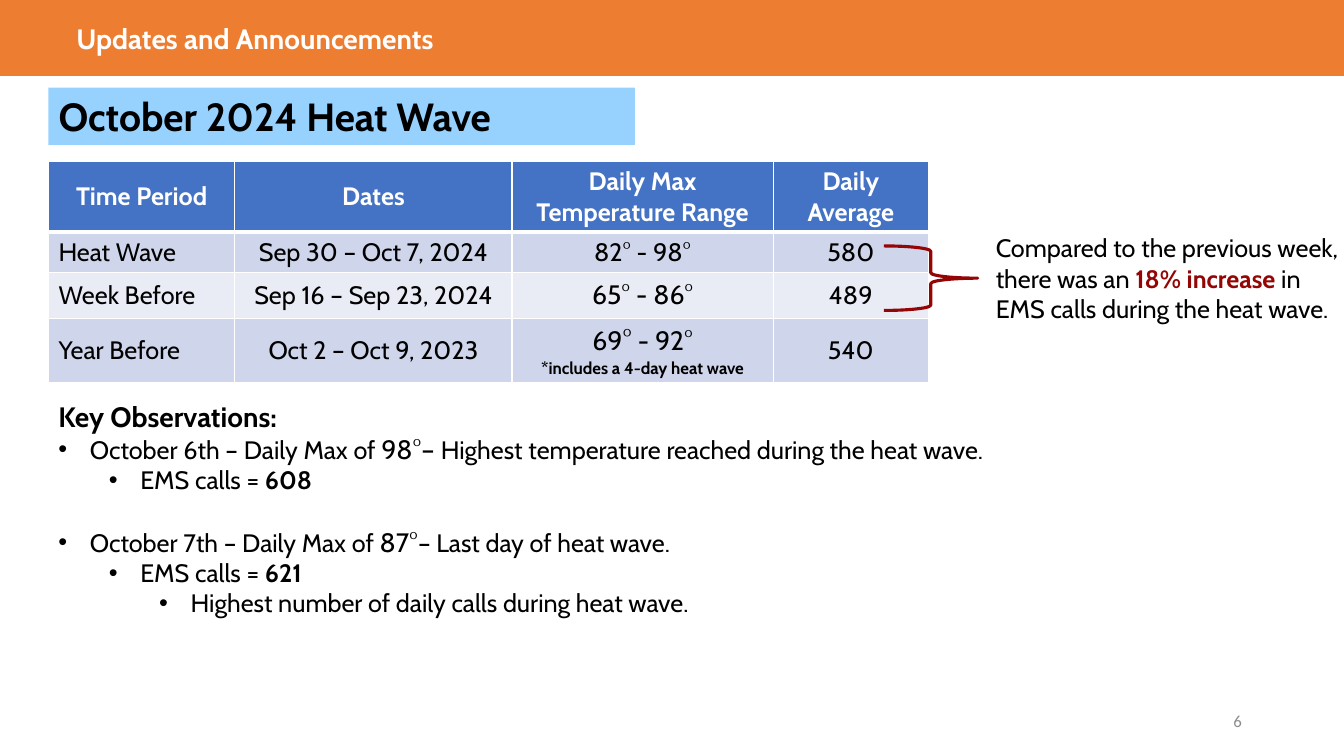
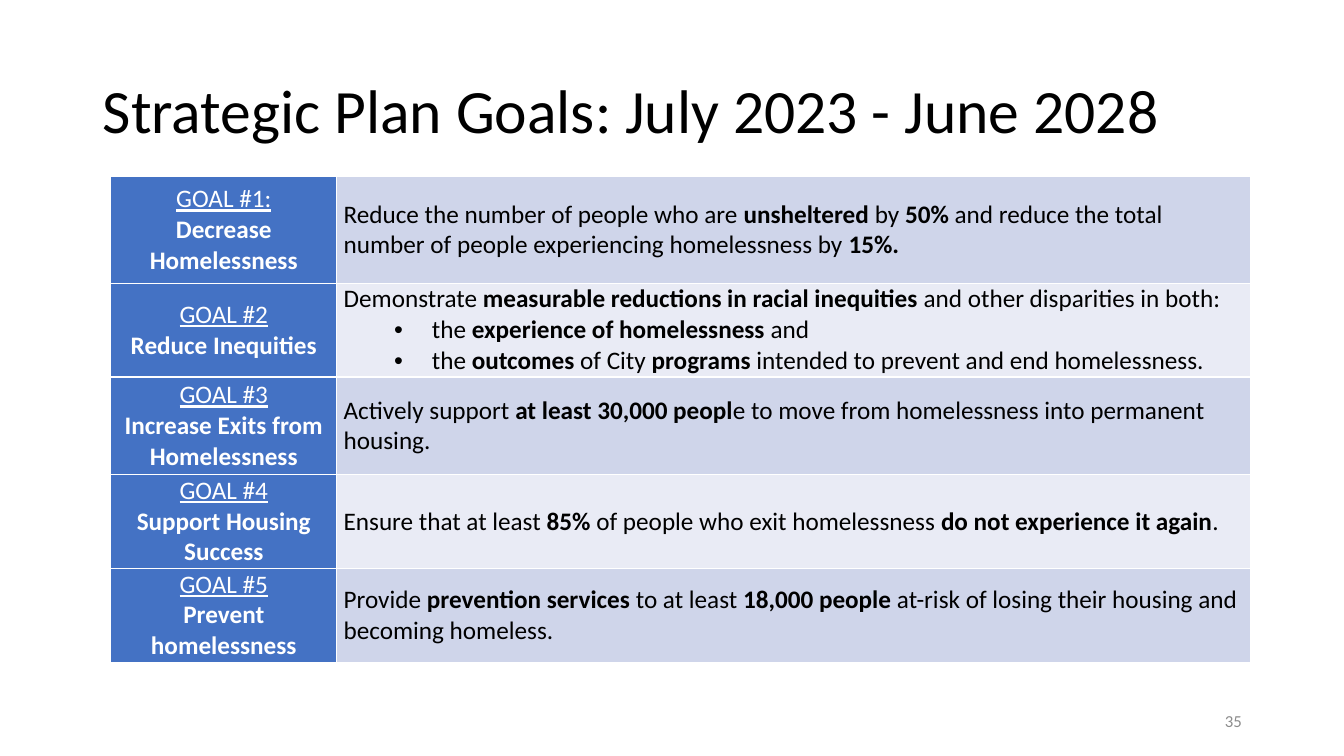
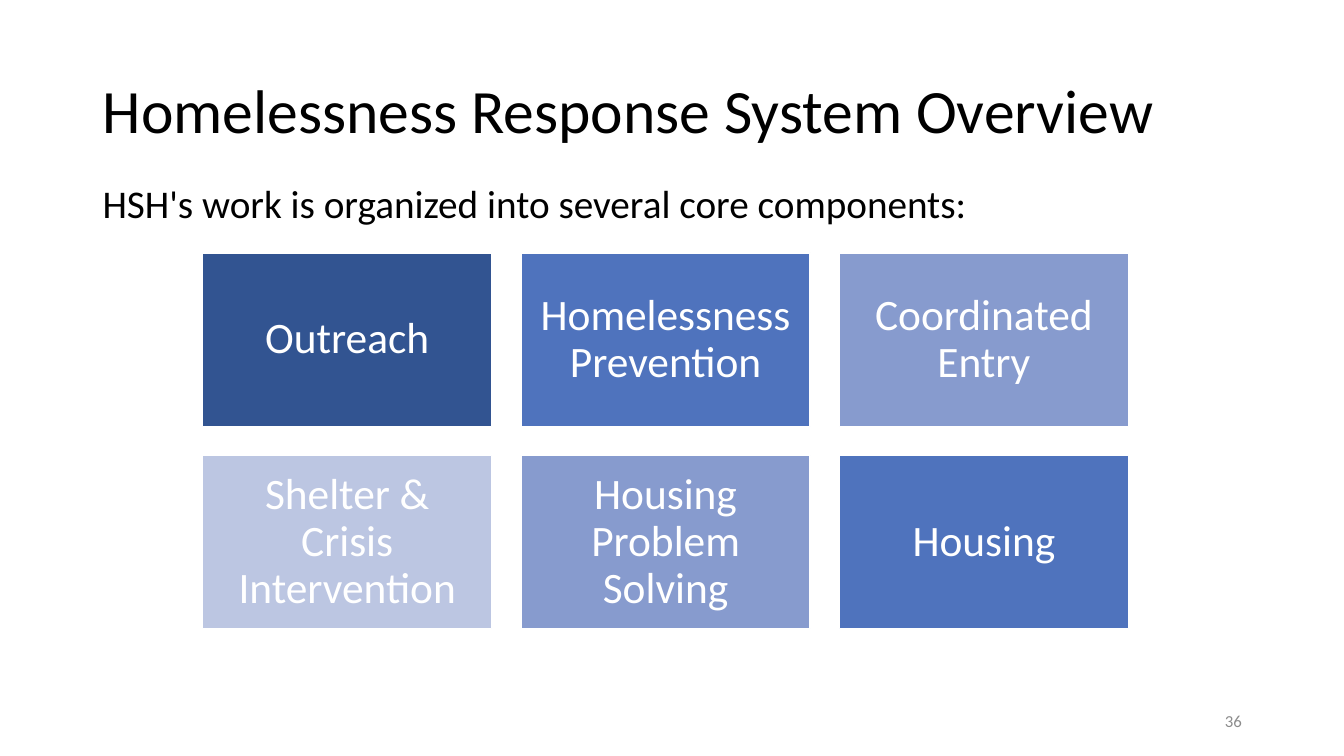
from lxml import etree
from pptx import Presentation
from pptx.dml.color import RGBColor
from pptx.enum import shapes, text
from pptx.oxml import ns
from pptx.util import Pt

COLORS = {
    "white": "FFFFFF", "black": "000000", "gray": "8C8C8C", "orange": "ED7D31",
    "sky": "97D2FF", "red": "940606", "blue": "4472C4",
    "row dark": "CFD5EA", "row light": "E9EBF5",
    "tile navy": "325491", "tile blue": "4F73BD",
    "tile mid": "879BCE", "tile pale": "BCC6E2",
}
LEFT, CENTER, RIGHT = text.PP_ALIGN.LEFT, text.PP_ALIGN.CENTER, text.PP_ALIGN.RIGHT
TOP, MIDDLE = text.MSO_ANCHOR.TOP, text.MSO_ANCHOR.MIDDLE
RECTANGLE = shapes.MSO_SHAPE.RECTANGLE
BULLET_STEP = 22.5


def rgb(name):
    return RGBColor.from_string(COLORS[name])


def add_xml(parent, tag, **attributes):
    return etree.SubElement(parent, ns.qn(tag), attributes)


def set_margins(target, margins):
    """Set left, top, right and bottom margins of a text frame or a cell."""
    for side, margin in zip(("left", "top", "right", "bottom"), margins):
        setattr(target, f"margin_{side}", Pt(margin))


def spans(pieces):
    """Yield (text, format) pairs; ** switches bold on and off in a string."""
    for piece in [pieces] if isinstance(pieces, str) else pieces:
        if isinstance(piece, tuple):
            yield piece
            continue
        for index, part in enumerate(piece.split("**")):
            if part:
                yield part, {"bold": True} if index % 2 else {}


def paragraph(pieces, **layout):
    return {"pieces": pieces, **layout}


def bullet(pieces, indent, hanging=BULLET_STEP, **layout):
    return paragraph(pieces, indent=indent, hanging=hanging, **layout)


class Deck:
    def __init__(self):
        self.deck = Presentation()
        self.deck.slide_width, self.deck.slide_height = Pt(960), Pt(540)
        self.page = None
        self.font = "Calibri"

    def add_page(self, number, font):
        self.page = self.deck.slides.add_slide(self.deck.slide_layouts[5])
        self.font = font
        self.text((678.2, 500.4, 216, 28.8), [str(number)], align=RIGHT, anchor=MIDDLE,
                  name="Calibri", size=12, color="gray")

    def set_text(self, frame, paragraphs, align=LEFT, anchor=TOP, line_spacing=None,
                 margins=(), **style):
        frame.word_wrap = True
        frame.vertical_anchor = anchor
        set_margins(frame, margins)
        for index, item in enumerate(paragraphs):
            if not isinstance(item, dict):
                item = paragraph(item)
            para = frame.add_paragraph() if index else frame.paragraphs[0]
            para.alignment = align
            if line_spacing:
                para.line_spacing = line_spacing
            if "space_before" in item:
                para.space_before = Pt(item["space_before"])
            if "indent" in item:
                self.add_bullet(para, item["indent"], item["hanging"])
            for words, changes in spans(item["pieces"]):
                span = para.add_run()
                span.text = words
                self.set_font(span.font, {**style, **item.get("style", {}), **changes})

    def set_font(self, font, changes):
        values = {"name": self.font, "size": 18, "bold": False, "color": "black", **changes}
        font.color.rgb = rgb(values.pop("color"))
        values["size"] = Pt(values["size"])
        for key, value in values.items():
            setattr(font, key, value)

    def add_bullet(self, para, indent, hanging):
        properties = para._p.get_or_add_pPr()
        properties.set("marL", str(Pt(indent)))
        properties.set("indent", str(-Pt(hanging)))
        add_xml(properties, "a:buFont", typeface="Arial")
        add_xml(properties, "a:buChar", char="•")

    def title(self, place, words, fill=None, **style):
        box = self.page.shapes.title
        box.left, box.top, box.width, box.height = map(Pt, place)
        box.text_frame.auto_size = text.MSO_AUTO_SIZE.NONE
        if fill:
            box.fill.solid()
            box.fill.fore_color.rgb = rgb(fill)
        self.set_text(box.text_frame, [words], **style)

    def plain_title(self, words):
        self.title((66.2, 28.8, 828, 104.4), words, size=44, anchor=MIDDLE, line_spacing=0.9)

    def text(self, place, paragraphs, **style):
        box = self.page.shapes.add_textbox(*map(Pt, place))
        self.set_text(box.text_frame, paragraphs, **style)

    def shape(self, kind, place, fill=None, line=None, weight=1, paragraphs=(), **style):
        box = self.page.shapes.add_shape(kind, *map(Pt, place))
        box.shadow.inherit = False
        if fill:
            box.fill.solid()
            box.fill.fore_color.rgb = rgb(fill)
        else:
            box.fill.background()
        box.line.color.rgb = rgb(line)
        box.line.width = Pt(weight)
        if paragraphs:
            self.set_text(box.text_frame, paragraphs, **style)

    def table(self, left, top, widths, heights, header_row):
        place = (left, top, sum(widths), sum(heights))
        frame = self.page.shapes.add_table(len(heights), len(widths), *map(Pt, place))
        table = frame.table
        table.first_row, table.horz_banding = header_row, False
        for column, width in zip(table.columns, widths):
            column.width = Pt(width)
        for row, height in zip(table.rows, heights):
            row.height = Pt(height)
        return table

    def cell(self, cell, paragraphs, fill, bottom=1, margins=(7.2, 3.6, 7.2, 3.6), **style):
        properties = cell._tc.get_or_add_tcPr()
        for side, weight in (("L", 1), ("R", 1), ("T", 1), ("B", bottom)):
            border = add_xml(properties, f"a:ln{side}", w=str(Pt(weight)))
            add_xml(add_xml(border, "a:solidFill"), "a:srgbClr", val=COLORS["white"])
        cell.fill.solid()
        cell.fill.fore_color.rgb = rgb(fill)
        self.set_text(cell.text_frame, paragraphs, **style)
        cell.vertical_anchor = MIDDLE
        set_margins(cell, margins)


def heat_wave(deck):
    deck.add_page(6, "Cabin")
    deck.shape(RECTANGLE, (0, 0, 960, 53.5), fill="orange", line="orange")
    deck.text((47.5, 5.8, 715, 46), ["Updates and Announcements"], anchor=MIDDLE,
              line_spacing=0.9, size=20, bold=True, color="white")
    deck.title((34.6, 62.6, 419, 41), "October 2024 Heat Wave", fill="sky", size=28, bold=True)

    larger = {"size": 19}
    rows = [
        [["Time Period"], ["Dates"], ["Daily Max", "Temperature Range"], ["Daily Average"]],
        [["Heat Wave"], ["Sep 30 – Oct 7, 2024"], ["82° - 98°"], ["580"]],
        [["Week Before"], ["Sep 16 – Sep 23, 2024"], [[("65° - 86°", larger)]], ["489"]],
        [["Year Before"], ["Oct 2 – Oct 9, 2023"],
         [[("69", larger), ("°", {"size": 20}), (" - 92°", larger)],
          [("*includes a 4-day heat wave", {"size": 12, "bold": True})]], ["540"]],
    ]
    table = deck.table(34.6, 115.2, (133.2, 198, 186.5, 110.9), (47.5, 27.4, 33.1, 43.2), True)
    for r, row in enumerate(rows):
        for c, paragraphs in enumerate(row):
            if r == 0:
                style = {"fill": "blue", "bottom": 3, "color": "white", "bold": True}
            else:
                style = {"fill": "row dark" if r % 2 else "row light"}
            deck.cell(table.cell(r, c), paragraphs,
                      align=LEFT if r and c == 0 else CENTER, **style)

    deck.shape(shapes.MSO_SHAPE.RIGHT_BRACE, (631.4, 175.7, 67, 46.1), line="red", weight=2.25)
    deck.text((704.2, 162.7, 255.8, 94.3), [[
        "Compared to the previous week, there was an ",
        ("18% increase ", {"color": "red", "bold": True}),
        "in EMS calls during the heat wave."]], margins=(7.2, 3.6, 0, 3.6))
    first, second, third = (BULLET_STEP + 36 * level for level in range(3))
    deck.text((34.6, 281.5, 870.5, 163.4), [
        paragraph("**Key Observations:**", style={"size": 20}),
        bullet(["October 6th – Daily Max of ", ("98°– ", larger),
                "Highest temperature reached during the heat wave."], first),
        bullet("EMS calls = **608**", second),
        bullet(["October 7th – Daily Max of ", ("87°", larger), "– Last day of heat wave."],
               first, space_before=22),
        bullet("EMS calls = **621**", second),
        bullet("Highest number of daily calls during heat wave.", third),
    ])


def strategic_goals(deck):
    deck.add_page(35, "Calibri")
    deck.plain_title("Strategic Plan Goals: July 2023 - June 2028")
    goals = [
        ("GOAL #1:", "Decrease Homelessness",
         ["Reduce the number of people who are **unsheltered** by **50%** and reduce the "
          "total number of people experiencing homelessness by **15%.**"]),
        ("GOAL #2", "Reduce Inequities",
         ["Demonstrate **measurable reductions in racial inequities** and other disparities "
          "in both:",
          bullet("the **experience of homelessness** and", 63, 27),
          bullet("the **outcomes** of City **programs** intended to prevent and end "
                 "homelessness.", 63, 27)]),
        ("GOAL #3", "Increase Exits from Homelessness",
         ["Actively support **at least 30,000 peopl**e to move from homelessness into "
          "permanent housing."]),
        ("GOAL #4", "Support Housing Success",
         ["Ensure that at least **85%** of people who exit homelessness "
          "**do not experience it again**."]),
        ("GOAL #5", "Prevent homelessness",
         ["Provide **prevention services** to at least **18,000 people** at-risk of losing "
          "their housing and becoming homeless."]),
    ]
    table = deck.table(79.2, 126, (161.3, 653), (76.3, 67, 69.8, 67, 67), False)
    margins = (5, 0, 5, 0)
    for r, (label, name, target) in enumerate(goals):
        heading = [[(label, {"underline": True})], f"**{name}**"]
        deck.cell(table.cell(r, 0), heading, "blue", margins=margins, align=CENTER,
                  color="white")
        deck.cell(table.cell(r, 1), target, "row light" if r % 2 else "row dark",
                  margins=margins)


def system_overview(deck):
    deck.add_page(36, "Calibri")
    deck.plain_title("Homelessness Response System Overview")
    deck.text((66.2, 128.2, 828, 93.6),
              ["HSH's work is organized into several core components:"],
              size=28, line_spacing=0.9)
    tiles = [
        ("Outreach", "tile navy"), ("Homelessness Prevention", "tile blue"),
        ("Coordinated Entry", "tile mid"), ("Shelter & Crisis Intervention", "tile pale"),
        ("Housing Problem Solving", "tile mid"), ("Housing", "tile blue"),
    ]
    width, height, gap = 206.6, 123.8, 20.8
    for index, (name, fill) in enumerate(tiles):
        row, column = divmod(index, 3)
        place = (144.7 + column * (width + gap), 180.7 + row * (height + gap), width, height)
        deck.shape(RECTANGLE, place, fill=fill, line="white", paragraphs=[name], align=CENTER,
                   anchor=MIDDLE, margins=(9.4,) * 4, line_spacing=0.9, size=31, color="white")


def main():
    deck = Deck()
    heat_wave(deck)
    strategic_goals(deck)
    system_overview(deck)
    deck.deck.save("out.pptx")


if __name__ == "__main__":
    main()
